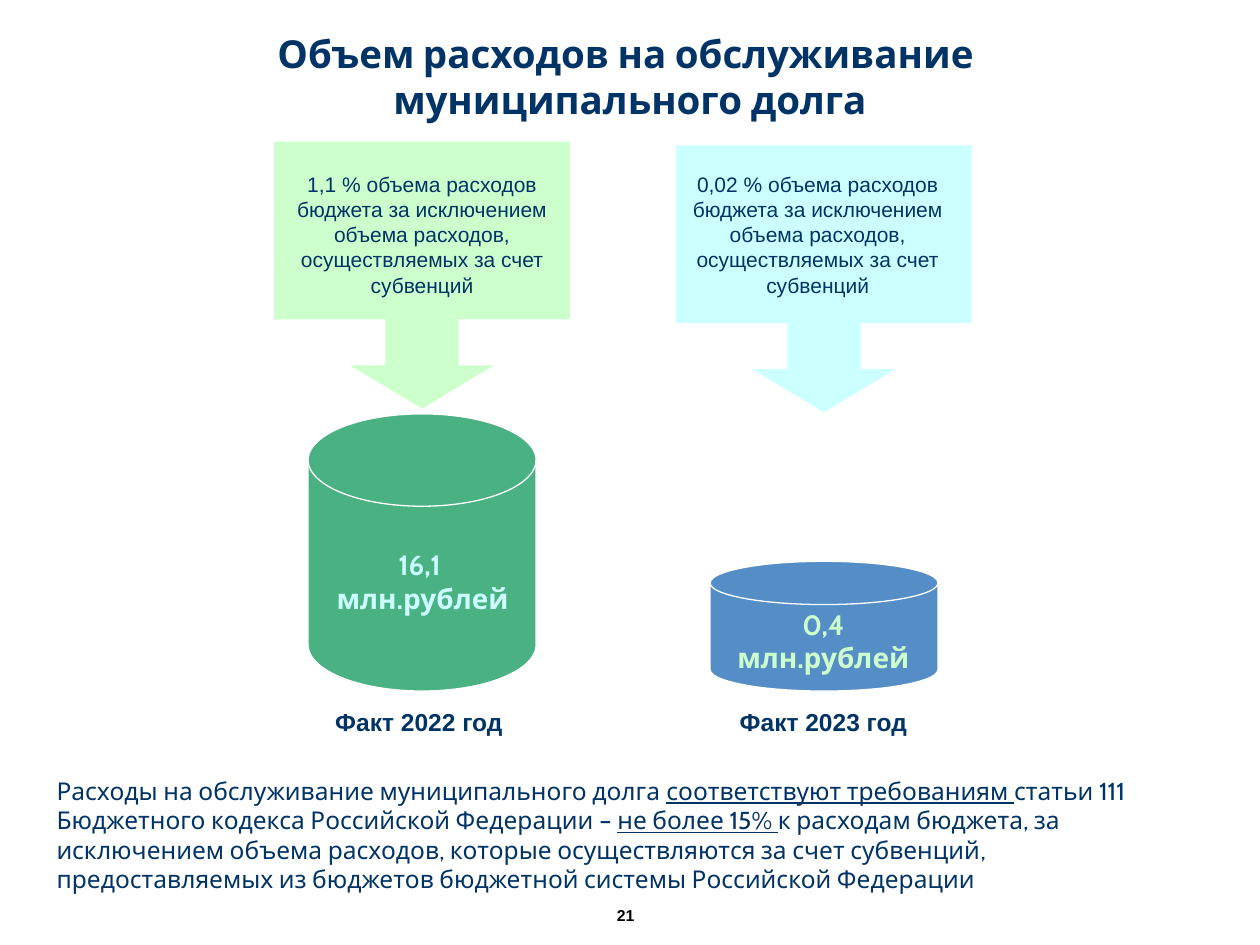
from dataclasses import dataclass

from pptx import Presentation
from pptx.dml.color import RGBColor
from pptx.enum.shapes import MSO_SHAPE
from pptx.enum.text import MSO_ANCHOR, PP_ALIGN
from pptx.util import Inches, Pt

WIDTH, HEIGHT = Inches(10), Inches(7.5)
COLUMNS, ROWS = 100, 75
NAVY, WHITE, BLACK = "003366", "FFFFFF", "000000"
MINT, ICE = "CCFFCC", "CCFFFF"
CALLOUT_WIDTH, CALLOUT_HEIGHT = 23.6, 21.3
CYLINDER_WIDTH, CYLINDER_BASE = 18.1, 54.85
CALLOUT_ADJUSTMENTS = (0.278, 0.278, 0.167, 0.667)
SHARE_TEXT = (
    "объема расходов бюджета за исключением объема расходов, "
    "осуществляемых за счет субвенций"
)


@dataclass(frozen=True)
class Area:
    column: float
    row: float
    columns: float
    rows: float

    def place(self) -> tuple[int, int, int, int]:
        return (
            int(WIDTH * self.column / COLUMNS),
            int(HEIGHT * self.row / ROWS),
            int(WIDTH * self.columns / COLUMNS),
            int(HEIGHT * self.rows / ROWS),
        )


@dataclass(frozen=True)
class Style:
    font: str
    size: float
    color: str = NAVY
    bold: bool = False
    align: PP_ALIGN = PP_ALIGN.CENTER
    anchor: MSO_ANCHOR = MSO_ANCHOR.TOP


@dataclass(frozen=True)
class Span:
    text: str
    underline: bool = False


@dataclass(frozen=True)
class YearDebt:
    year: int
    center: float
    callout_row: float
    callout_color: str
    cylinder_rows: float
    cylinder_color: str
    share: str
    share_area: Area
    amount: tuple[str, ...]
    amount_area: Area
    amount_color: str
    caption_column: float


def rgb(color: str) -> RGBColor:
    return RGBColor.from_string(color)


def draw_shape(page, kind: MSO_SHAPE, area: Area, color: str):
    shape = page.shapes.add_shape(kind, *area.place())
    shape.shadow.inherit = False
    shape.fill.solid()
    shape.fill.fore_color.rgb = rgb(color)
    shape.line.color.rgb = rgb(WHITE)
    shape.line.width = Pt(0.75)
    return shape


def draw_text(page, area: Area, style: Style, *paragraphs: list[Span]) -> None:
    frame = page.shapes.add_textbox(*area.place()).text_frame
    frame.word_wrap = True
    frame.vertical_anchor = style.anchor
    for index, spans in enumerate(paragraphs):
        para = frame.add_paragraph() if index else frame.paragraphs[0]
        para.alignment = style.align
        para.font.name = style.font
        para.font.size = Pt(style.size)
        para.font.bold = style.bold
        para.font.color.rgb = rgb(style.color)
        for span in spans:
            for line_index, line in enumerate(span.text.split("\n")):
                if line_index:
                    para.add_line_break()
                run = para.add_run()
                run.text = line
                if span.underline:
                    run.font.underline = True


def draw_year(page, debt: YearDebt) -> None:
    cylinder = Area(
        debt.center - CYLINDER_WIDTH / 2,
        CYLINDER_BASE - debt.cylinder_rows,
        CYLINDER_WIDTH,
        debt.cylinder_rows,
    )
    draw_shape(page, MSO_SHAPE.FLOWCHART_MAGNETIC_DISK, cylinder, debt.cylinder_color)
    callout_area = Area(
        debt.center - CALLOUT_WIDTH / 2, debt.callout_row, CALLOUT_WIDTH, CALLOUT_HEIGHT
    )
    callout = draw_shape(
        page, MSO_SHAPE.DOWN_ARROW_CALLOUT, callout_area, debt.callout_color
    )
    for index, value in enumerate(CALLOUT_ADJUSTMENTS):
        callout.adjustments[index] = value

    draw_text(
        page, debt.share_area, Style("Arial", 12), [Span(f"{debt.share} % {SHARE_TEXT}")]
    )
    draw_text(
        page,
        debt.amount_area,
        Style("Cabin", 16, debt.amount_color, bold=True),
        *([Span(line)] for line in debt.amount),
    )
    draw_text(
        page,
        Area(debt.caption_column, 55.6, CYLINDER_WIDTH, 3.3),
        Style("Arial", 14, bold=True),
        [Span(f"Факт {debt.year} год")],
    )


YEARS = (
    YearDebt(
        2022, 33.5, 11.2, MINT, 22, "49B182",
        "1,1", Area(20.1, 13.1, 26.8, 11.1),
        ("16,1 ", "млн.рублей"), Area(24.5, 43, 18.1, 6.4), ICE, 24.2,
    ),
    YearDebt(
        2023, 65.4, 11.5, ICE, 10.3, "558EC7",
        "0,02", Area(52.7, 13.1, 24.4, 11.1),
        ("0,4 млн.рублей",), Area(57.1, 47.7, 16.5, 6.4), MINT, 56.3,
    ),
)
CONCLUSION = [
    Span("Расходы на обслуживание муниципального долга "),
    Span("соответствуют требованиям ", underline=True),
    Span("статьи 111 Бюджетного кодекса Российской Федерации – "),
    Span("не более 15% ", underline=True),
    Span(
        "к расходам бюджета, за исключением объема расходов, которые "
        "осуществляются за счет субвенций, предоставляемых из бюджетов "
        "бюджетной системы Российской Федерации"
    ),
]


def main() -> None:
    deck = Presentation()
    deck.slide_width, deck.slide_height = WIDTH, HEIGHT
    page = deck.slides.add_slide(deck.slide_layouts[6])
    page.background.fill.solid()
    page.background.fill.fore_color.rgb = rgb(WHITE)

    draw_text(
        page,
        Area(4.3, 2.1, 91.4, 7.9),
        Style("Cabin", 22, bold=True, anchor=MSO_ANCHOR.MIDDLE),
        [Span("Объем расходов на обслуживание \nмуниципального долга")],
    )
    for debt in YEARS:
        draw_year(page, debt)
    draw_text(
        page,
        Area(3.5, 61.1, 92.9, 10.3),
        Style("Cabin", 14, align=PP_ALIGN.LEFT),
        CONCLUSION,
    )
    draw_text(
        page,
        Area(46.9, 71.4, 5.5, 2.5),
        Style("Arial", 9, BLACK, bold=True, anchor=MSO_ANCHOR.MIDDLE),
        [Span("21")],
    )
    deck.save("out.pptx")


if __name__ == "__main__":
    main()
